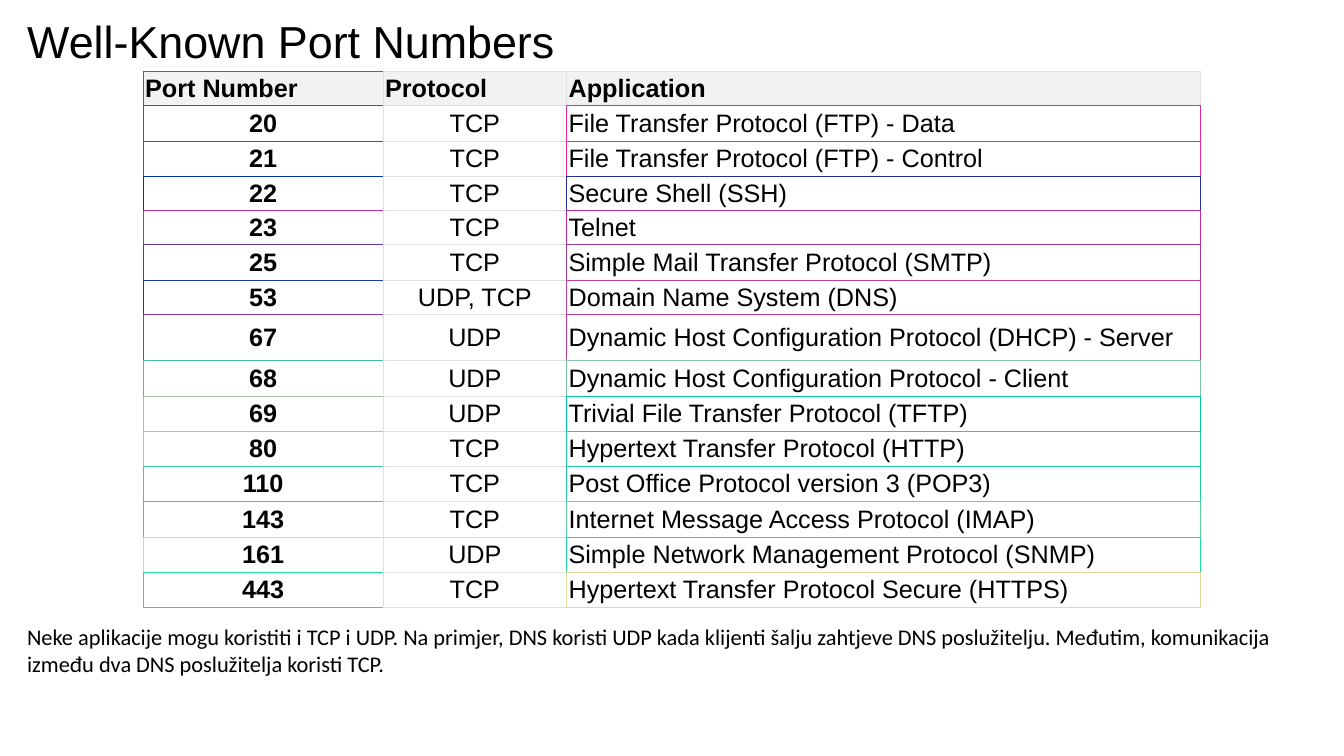
from lxml.etree import SubElement
from pptx import Presentation
from pptx.dml.color import RGBColor
from pptx.enum.text import MSO_ANCHOR, PP_ALIGN
from pptx.oxml.ns import qn
from pptx.util import Inches, Pt

TITLE = "Well-Known Port Numbers"
NOTE = ("Neke aplikacije mogu koristiti i TCP i UDP. Na primjer, DNS koristi UDP kada "
        "klijenti šalju zahtjeve DNS poslužitelju. Međutim, komunikacija između dva DNS "
        "poslužitelja koristi TCP.")
GREY = "DFDFDF"
COLS = (2.38, 1.82, 6.29)
# port, protocol, application, row height, edge of first cell, edge of last cell
ROWS = [
    ("Port Number", "Protocol", "Application", 0.14, "C027A2", GREY),
    ("20", "TCP", "File Transfer Protocol (FTP) - Data", 0.35, "A021A2", "E028A2"),
    ("21", "TCP", "File Transfer Protocol (FTP) - Control", 0.35, "A023A2", "E02AA2"),
    ("22", "TCP", "Secure Shell (SSH)", 0.25, "0031A2", "2029A2"),
    ("23", "TCP", "Telnet", 0.14, "C02DA2", "C02CA2"),
    ("25", "TCP", "Simple Mail Transfer Protocol (SMTP)", 0.35, "6038A2", "A038A2"),
    ("53", "UDP, TCP", "Domain Name System (DNS)", 0.25, "2035A2", "C03FA2"),
    ("67", "UDP", "Dynamic Host Configuration Protocol (DHCP) - Server", 0.46,
     "803CA2", "C03BA2"),
    ("68", "UDP", "Dynamic Host Configuration Protocol - Client", 0.35, "40C2A1", "80C5A1"),
    ("69", "UDP", "Trivial File Transfer Protocol (TFTP)", 0.35, "A0C4A1", "00C5A1"),
    ("80", "TCP", "Hypertext Transfer Protocol (HTTP)", 0.35, "A0CDA1", "20D0A1"),
    ("110", "TCP", "Post Office Protocol version 3 (POP3)", 0.35, "40CBA1", "20CCA1"),
    ("143", "TCP", "Internet Message Access Protocol (IMAP)", 0.35, "20D3A1", "60D5A1"),
    ("161", "UDP", "Simple Network Management Protocol (SNMP)", 0.35, "E0D5A1", "20D6A1"),
    ("443", "TCP", "Hypertext Transfer Protocol Secure (HTTPS)", 0.35, "20DDA1", "E0DAA1"),
]


def color(code):
    return RGBColor.from_string(code)


def write(frame, text, size=18, font="Arial", bold=False, align=PP_ALIGN.LEFT, space=1.0):
    para = frame.paragraphs[0]
    para.alignment = align
    para.line_spacing = space
    run = para.add_run()
    run.text = text
    run.font.size = Pt(size)
    run.font.name = font
    run.font.bold = bold
    run.font.color.rgb = color("000000")


def add_box(slide, text, left, top, width, height, **style):
    frame = slide.shapes.add_textbox(*map(Inches, (left, top, width, height))).text_frame
    frame.word_wrap = True
    write(frame, text, **style)
    return frame


def set_edges(cell, *codes):
    """Draw left, right, top and bottom edges, ahead of the fill as the schema asks."""
    props = cell._tc.get_or_add_tcPr()
    for spot, (side, code) in enumerate(zip("LRTB", codes)):
        line = SubElement(props, qn(f"a:ln{side}"), w=str(Pt(0.75)))
        fill = SubElement(line, qn("a:solidFill"))
        SubElement(fill, qn("a:srgbClr"), val=code)
        props.insert(spot, line)


def add_ports(slide, left, top, height):
    frame = slide.shapes.add_table(len(ROWS), len(COLS), Inches(left), Inches(top),
                                   Inches(sum(COLS)), Inches(height))
    table = frame.table
    for col, width in zip(table.columns, COLS):
        col.width = Inches(width)
    for i, (*texts, tall, first, last) in enumerate(ROWS):
        table.rows[i].height = Inches(tall)
        below = ROWS[min(i + 1, len(ROWS) - 1)]
        edges = ((first, GREY, first, below[-2]),
                 (GREY, last, GREY, GREY),
                 (last, last, last, below[-1]))
        for j, text in enumerate(texts):
            cell = table.cell(i, j)
            cell.margin_left = cell.margin_right = Inches(0.02)
            cell.margin_top = cell.margin_bottom = Inches(0.02)
            cell.vertical_anchor = MSO_ANCHOR.MIDDLE
            cell.fill.solid()
            cell.fill.fore_color.rgb = color("FFFFFF" if i else "F2F2F2")
            write(cell.text_frame, text, bold=i == 0 or j == 0,
                  align=PP_ALIGN.CENTER if i and j < 2 else PP_ALIGN.LEFT)
            set_edges(cell, *edges[j])
    frame.height = Inches(height)


def main():
    deck = Presentation()
    deck.slide_width, deck.slide_height = Inches(13.33), Inches(7.5)
    slide = deck.slides.add_slide(deck.slide_layouts[6])
    title = add_box(slide, TITLE, 0.27, 0.16, 11.82, 0.56, size=32, space=0.9)
    title.margin_left = 0
    title.vertical_anchor = MSO_ANCHOR.MIDDLE
    add_ports(slide, 1.42, 0.71, 5.33)
    add_box(slide, NOTE, 0.17, 6.13, 13.07, 0.64, size=16, font="Calibri")
    deck.save("out.pptx")


if __name__ == "__main__":
    main()
